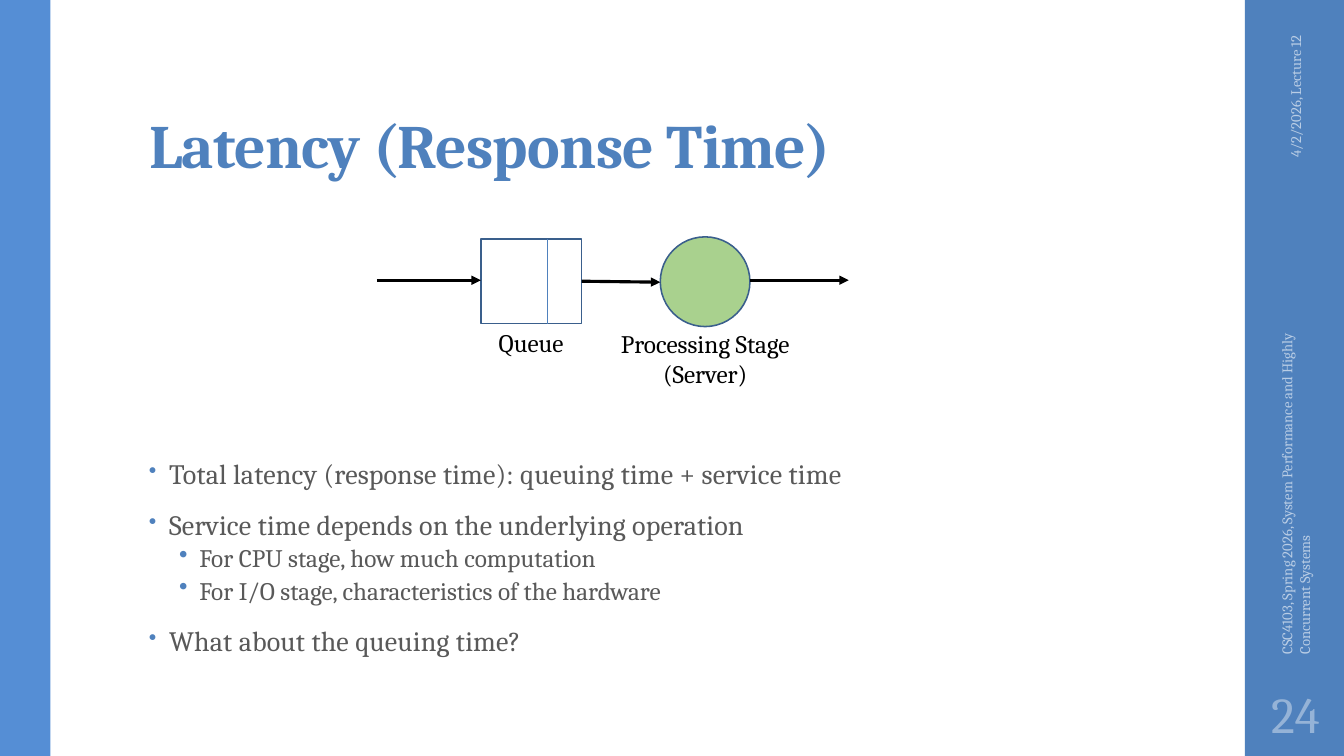
import lxml.etree
import pptx
import pptx.dml.color
import pptx.enum.shapes
import pptx.enum.text
import pptx.oxml.ns
import pptx.util

ALIGN = pptx.enum.text.PP_ALIGN
ANCHOR = pptx.enum.text.MSO_ANCHOR
SHAPE = pptx.enum.shapes.MSO_SHAPE
BLUE, PALE_BLUE, OUTLINE = "4F81BD", "B9CDE5", "3A5F8C"


def color(hex_string):
    return pptx.dml.color.RGBColor.from_string(hex_string)


def add_xml(parent, tag, **attributes):
    return lxml.etree.SubElement(parent, pptx.oxml.ns.qn(tag), attributes)


class SlideBuilder:
    """Draws on one slide; every place is in percent of its width and height."""

    font_name = "Cambria"
    # level: size, letter spacing, indent, line spacing, before, after, bullet %
    bullet_levels = {
        0: (20, 0.1, 0.2, 0.85, 14, 2, 80),
        1: (18, 0, 0.5, 0.8, 3, 3, 100),
    }

    def __init__(self, deck):
        self.deck = deck
        self.slide = deck.slides.add_slide(deck.slide_layouts[5])

    def x(self, percent):
        return round(self.deck.slide_width * percent / 100)

    def y(self, percent):
        return round(self.deck.slide_height * percent / 100)

    def frame(self, left, top, width, height):
        return self.x(left), self.y(top), self.x(width), self.y(height)

    def format_runs(self, paragraph, size, hex_color, bold=False, spacing=0):
        for run in paragraph.runs:
            run.font.name = self.font_name
            run.font.size = pptx.util.Pt(size)
            run.font.bold = bold
            run.font.color.rgb = color(hex_color)
            if spacing:
                run.font._element.set("spc", str(round(spacing * 100)))

    def title(self, text, place):
        heading = self.slide.shapes.title
        heading.left, heading.top, heading.width, heading.height = self.frame(*place)
        body = heading.text_frame
        body.text = text
        body.vertical_anchor = ANCHOR.BOTTOM
        body.auto_size = pptx.enum.text.MSO_AUTO_SIZE.NONE
        body.margin_top = pptx.util.Inches(0.03)
        paragraph = body.paragraphs[0]
        paragraph.alignment = ALIGN.LEFT
        paragraph.line_spacing = 0.9
        self.format_runs(paragraph, 44, BLUE, bold=True, spacing=-0.5)

    def shape(self, kind, place, fill, outline=None):
        figure = self.slide.shapes.add_shape(kind, *self.frame(*place))
        figure.shadow.inherit = False
        figure.fill.solid()
        figure.fill.fore_color.rgb = color(fill)
        if outline:
            figure.line.color.rgb = color(outline)
            figure.line.width = pptx.util.Pt(1.1)
        else:
            figure.line.fill.background()

    def line(self, start, end, hex_color="000000", width=2.25, arrow=True):
        connector = self.slide.shapes.add_connector(
            pptx.enum.shapes.MSO_CONNECTOR.STRAIGHT,
            self.x(start[0]), self.y(start[1]), self.x(end[0]), self.y(end[1]))
        connector.line.color.rgb = color(hex_color)
        connector.line.width = pptx.util.Pt(width)
        if arrow:
            add_xml(connector.line._get_or_add_ln(), "a:tailEnd", type="triangle")
        add_xml(connector._element.spPr, "a:effectLst")

    def text(self, text, place, size, hex_color, align=ALIGN.CENTER,
             anchor=ANCHOR.TOP, rotation=0, side_margin=0.1):
        box = self.slide.shapes.add_textbox(*self.frame(*place))
        box.rotation = rotation
        body = box.text_frame
        body.word_wrap = True
        body.vertical_anchor = anchor
        body.margin_left = body.margin_right = pptx.util.Inches(side_margin)
        body.text = text
        body.paragraphs[0].alignment = align
        self.format_runs(body.paragraphs[0], size, hex_color)

    def bullets(self, items, place):
        """Write (level, text) pairs as one bulleted list."""
        body = self.slide.shapes.add_textbox(*self.frame(*place)).text_frame
        body.word_wrap = True
        body.text = "\n".join(text for _, text in items)
        for index, (level, _) in enumerate(items):
            size, spacing, indent, leading, before, after, mark = self.bullet_levels[level]
            paragraph = body.paragraphs[index]
            paragraph.level = level
            properties = paragraph._p.get_or_add_pPr()
            properties.set("marL", str(pptx.util.Inches(indent)))
            properties.set("indent", str(pptx.util.Inches(-0.2)))
            add_xml(add_xml(properties, "a:buClr"), "a:srgbClr", val=BLUE)
            add_xml(properties, "a:buSzPct", val=str(mark * 1000))
            add_xml(properties, "a:buChar", char="•")
            paragraph.line_spacing = leading
            paragraph.space_before = pptx.util.Pt(before if index else 0)
            paragraph.space_after = pptx.util.Pt(after)
            self.format_runs(paragraph, size, "595959", spacing=spacing)


def draw_side_bars(page):
    page.shape(SHAPE.RECTANGLE, (92.63, 0, 7.37, 100), BLUE)
    page.shape(SHAPE.RECTANGLE, (0, 0, 3.75, 100), "558ED5")
    page.text("4/2/2026, Lecture 12", (88.58, 14.53, 15.6, 5.33), 10.5, PALE_BLUE,
              ALIGN.RIGHT, ANCHOR.MIDDLE, rotation=270)
    page.text("CSC4103, Spring 2026, System Performance and Highly Concurrent Systems",
              (81.68, 59.07, 29.4, 5.33), 10.5, PALE_BLUE,
              ALIGN.LEFT, ANCHOR.MIDDLE, rotation=270)
    page.text("24", (92.63, 90, 7.5, 8.67), 36, "95B3D7",
              anchor=ANCHOR.MIDDLE, side_margin=0.05)


def draw_queue_and_server(page):
    queue_left, queue_right, queue_top, queue_bottom = 35.78, 43.28, 31.6, 42.8
    server_left, server_right = 49.13, 55.8
    divider, flow = 40.73, 37.07
    page.shape(SHAPE.OVAL, (server_left, 31.33, server_right - server_left, 11.87),
               "A9D18E", OUTLINE)
    page.shape(SHAPE.RECTANGLE,
               (queue_left, queue_top, queue_right - queue_left, queue_bottom - queue_top),
               "FFFFFF", OUTLINE)
    page.line((divider, queue_top), (divider, queue_bottom), BLUE, 0.75, arrow=False)
    page.line((28.05, flow), (queue_left, flow))
    page.line((server_right, flow), (63.15, flow))
    page.line((queue_right, 37.2), (server_left, 37.33))
    page.text("Processing Stage (Server)", (45.38, 42.8, 14.18, 9.47), 18, "000000")
    page.text("Queue", (33, 42.67, 13.05, 5.33), 18, "000000")


def main():
    deck = pptx.Presentation()
    deck.slide_width = pptx.util.Inches(13.33)
    deck.slide_height = pptx.util.Inches(7.5)
    page = SlideBuilder(deck)
    draw_side_bars(page)
    page.title("Latency (Response Time)", (10.35, 4.27, 79.5, 20.4))
    draw_queue_and_server(page)
    page.bullets([
        (0, "Total latency (response time): queuing time + service time"),
        (0, "Service time depends on the underlying operation"),
        (1, "For CPU stage, how much computation"),
        (1, "For I/O stage, characteristics of the hardware"),
        (0, "What about the queuing time?"),
    ], (10.35, 60.4, 70.5, 29.73))
    deck.save("out.pptx")


if __name__ == "__main__":
    main()
